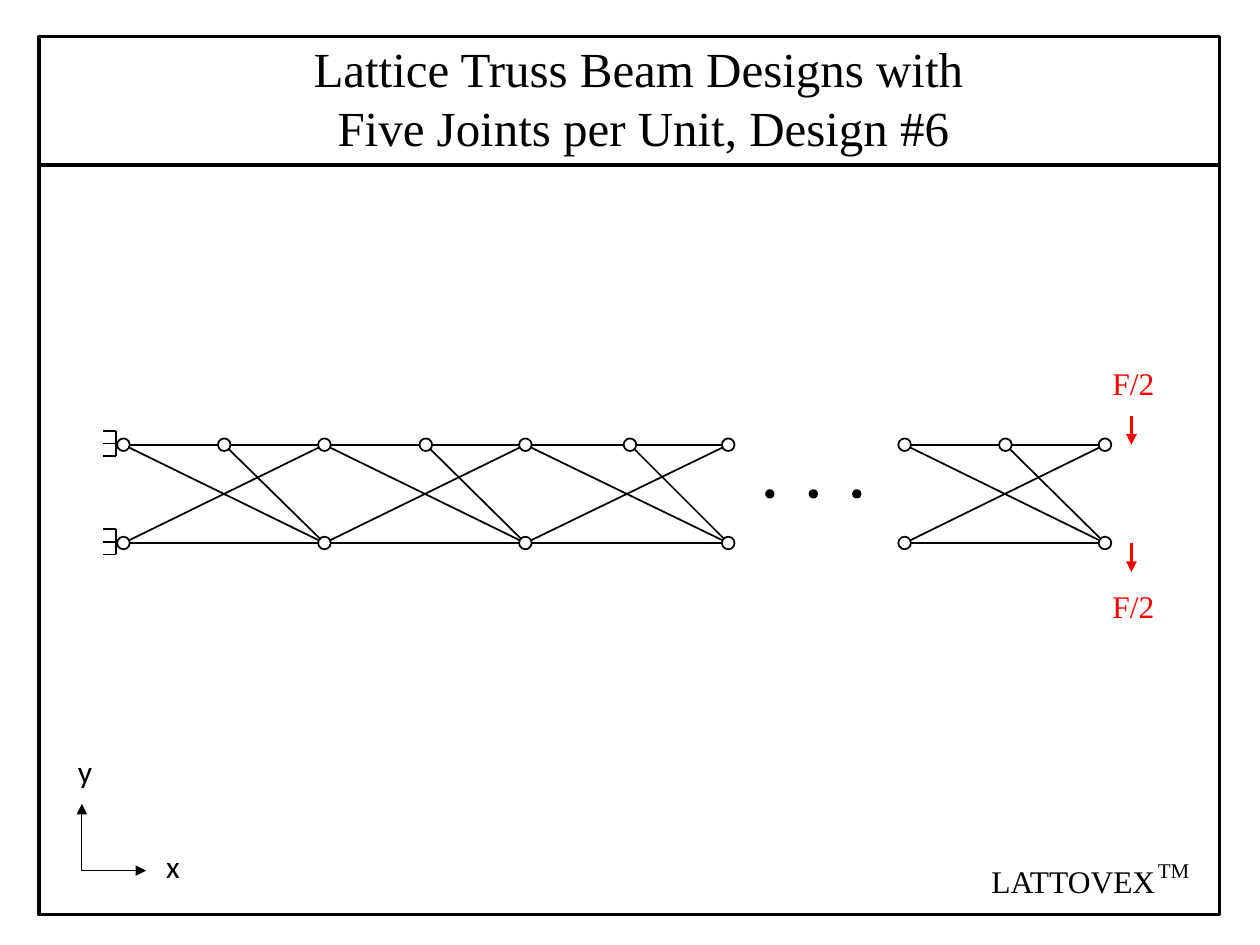
import pptx
import pptx.dml.color
import pptx.enum.shapes
import pptx.oxml.ns
import pptx.util
from lxml import etree

BLACK = pptx.dml.color.RGBColor(0, 0, 0)
WHITE = pptx.dml.color.RGBColor(255, 255, 255)
RED = pptx.dml.color.RGBColor(255, 0, 0)
SERIF = "Times New Roman"
SANS = "Calibri"
COLS, ROWS = 100, 75
TOP, BASE = 35.3, 43.1
BAYS = [(9.8, 17.8, 25.75), (25.75, 33.8, 41.7),
        (41.7, 50, 57.8), (71.8, 79.8, 87.7)]


def cell(count):
    return pptx.util.Inches(10 * count / COLS)


def add_tag(parent, tag, **attrs):
    return etree.SubElement(parent, pptx.oxml.ns.qn(tag), **attrs)


def add_line(slide, start, end, width=1, color=BLACK, arrow=False):
    line = slide.shapes.add_connector(
        pptx.enum.shapes.MSO_CONNECTOR.STRAIGHT, *map(cell, (*start, *end)))
    line.line.color.rgb = color
    line.line.width = pptx.util.Pt(width)
    if arrow:
        add_tag(line.line._get_or_add_ln(), "a:tailEnd", type="triangle")
    add_tag(line._element.spPr, "a:effectLst")


def add_form(slide, kind, box, fill=None, width=1):
    form = slide.shapes.add_shape(kind, *map(cell, box))
    form.shadow.inherit = False
    if fill is None:
        form.fill.background()
    else:
        form.fill.solid()
        form.fill.fore_color.rgb = fill
    form.line.color.rgb = BLACK
    form.line.width = pptx.util.Pt(width)


def add_dot(slide, x, y, size=1, fill=WHITE):
    oval = pptx.enum.shapes.MSO_SHAPE.OVAL
    add_form(slide, oval, (x - size / 2, y - size / 2, size, size), fill)


def add_text(slide, box, lines, size=18, font=SERIF, color=BLACK):
    frame = slide.shapes.add_textbox(*map(cell, box)).text_frame
    frame.word_wrap = True
    frame.text = "\n".join(lines)
    for para in frame.paragraphs:
        para.font.size = pptx.util.Pt(size)
        para.font.name = font
        para.font.color.rgb = color
    return frame


def add_bars(slide, left, mid, right):
    for start, end in [((left, TOP), (mid, TOP)),
                       ((mid, TOP), (right, TOP)),
                       ((left, BASE), (right, BASE)),
                       ((left, TOP), (right, BASE)),
                       ((left, BASE), (right, TOP)),
                       ((mid, TOP), (right, BASE))]:
        add_line(slide, start, end)


def add_truss(slide):
    for bay in BAYS:
        add_bars(slide, *bay)
    for x in sorted({x for bay in BAYS for x in bay}):
        add_dot(slide, x, TOP)
    for x in sorted({x for left, _, right in BAYS for x in (left, right)}):
        add_dot(slide, x, BASE)
    for step in range(3):
        add_dot(slide, 61.1 + 3.45 * step, 39.2, 0.6, BLACK)


def add_clamp(slide, y):
    add_line(slide, (9.2, y - 1), (9.2, y + 1))
    for step in (-1, 0, 1):
        add_line(slide, (8.2, y + step), (9.2, y + step))


def add_load(slide, y, label):
    add_line(slide, (89.8, y), (89.8, y + 2.3), 2, RED, True)
    add_text(slide, (87.3, label, 6, 4), ["F/2"], color=RED)


def add_axes(slide):
    base = (6.5, 69.1)
    for end, name, x, y in [((11.6, 69.1), "x", 12.2, 66.7),
                            ((6.5, 63.8), "y", 5.2, 59.2)]:
        add_line(slide, base, end, 0.5, arrow=True)
        add_text(slide, (x, y, 3.1, 4), [name], font=SANS)


def add_frame(slide):
    rect = pptx.enum.shapes.MSO_SHAPE.RECTANGLE
    add_form(slide, rect, (3.1, 2.9, 93.7, 69.7), width=2)
    add_line(slide, (3.1, 13.1), (96.8, 13.1), 2)
    title = add_text(slide, (23.9, 2.6, 56.9, 10.4),
                     ["Lattice Truss Beam Designs with",
                      "Five Joints per Unit, Design #6"], 28)
    indent = title.paragraphs[1]._p.get_or_add_pPr()
    indent.set("marL", str(int(cell(1.9))))
    add_text(slide, (77.7, 67.9, 15.2, 4), ["LATTOVEX"])
    add_text(slide, (90.9, 67.6, 5.1, 3), ["TM"], 12)


def main():
    deck = pptx.Presentation()
    deck.slide_width, deck.slide_height = cell(COLS), cell(ROWS)
    slide = deck.slides.add_slide(deck.slide_layouts[6])
    add_frame(slide)
    add_truss(slide)
    for y in (TOP - 0.1, BASE - 0.1):
        add_clamp(slide, y)
    add_load(slide, 33, 28.4)
    add_load(slide, 43.1, 46.1)
    add_axes(slide)
    deck.save("out.pptx")


if __name__ == "__main__":
    main()
